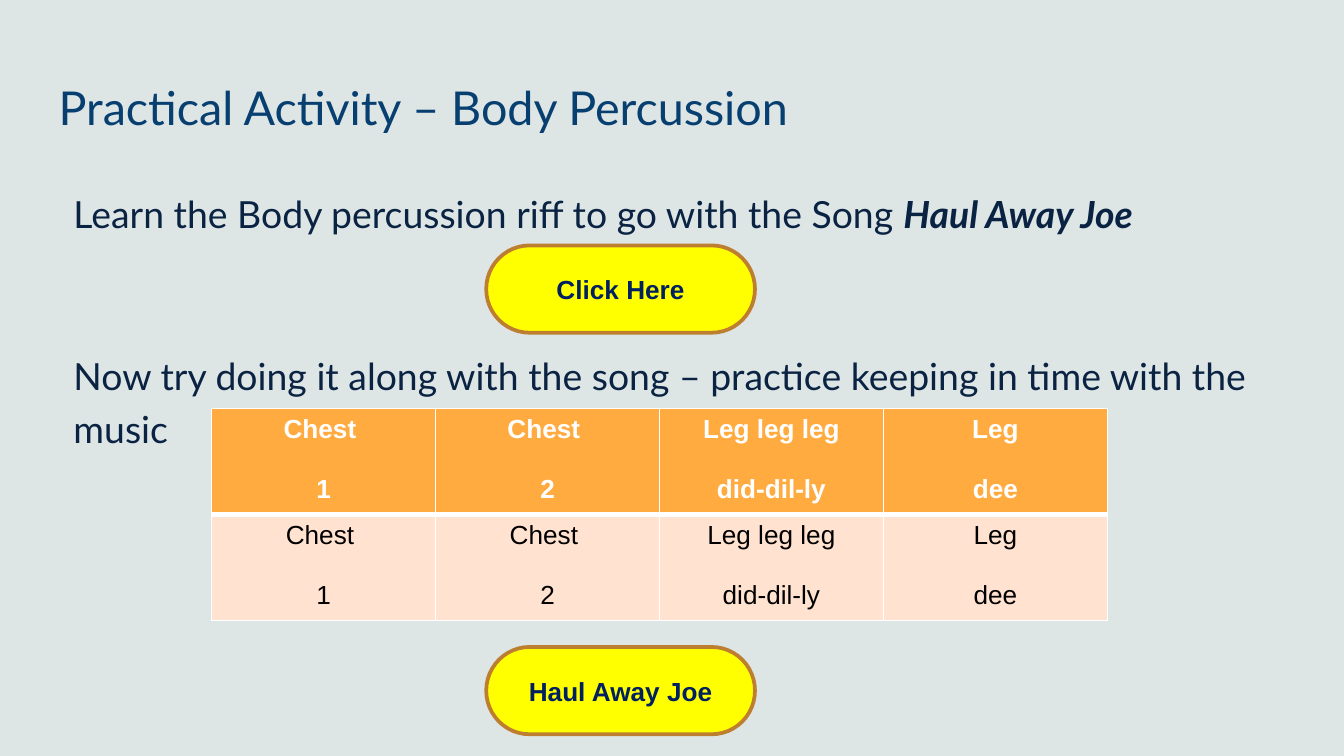
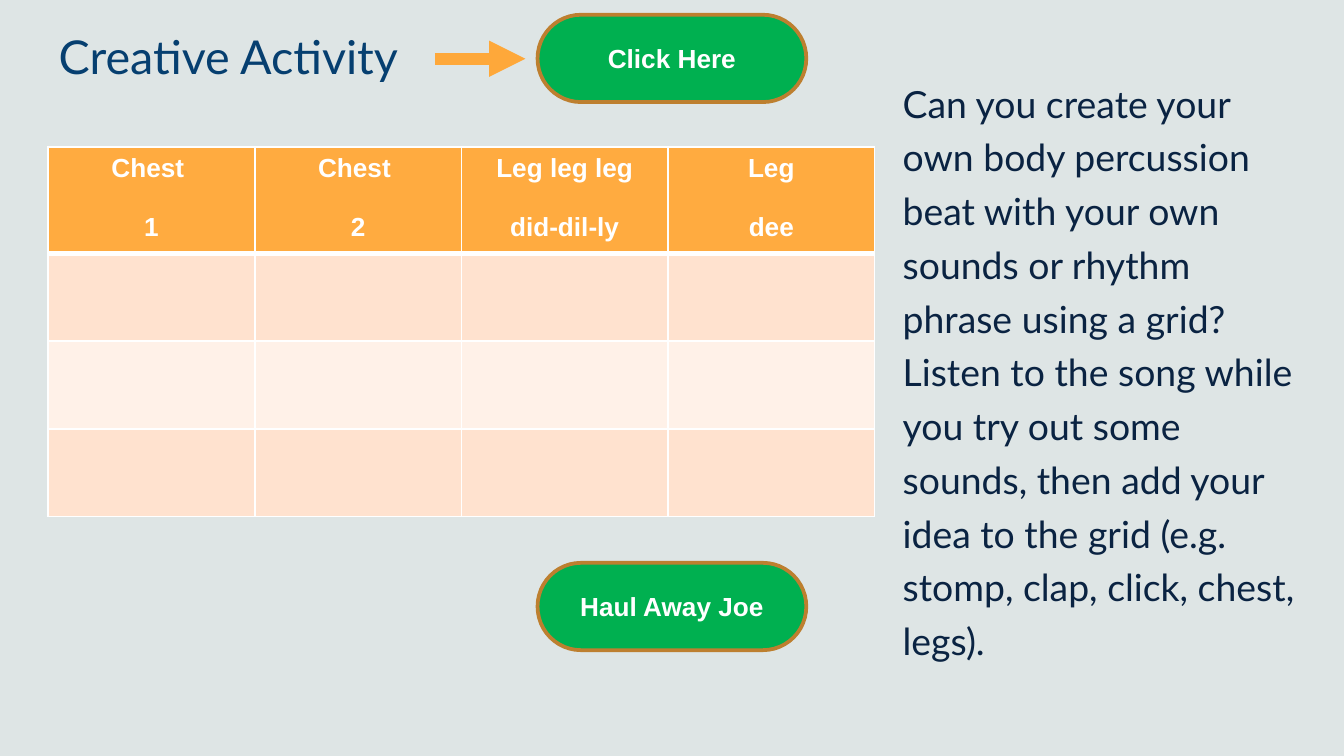
import pptx
import pptx.dml.color
import pptx.enum.shapes
import pptx.enum.text
import pptx.oxml
import pptx.oxml.ns
import pptx.util

Cm = pptx.util.Cm
Pt = pptx.util.Pt
RGBColor = pptx.dml.color.RGBColor
ALIGN = pptx.enum.text.PP_ALIGN
ANCHOR = pptx.enum.text.MSO_ANCHOR
SHAPE = pptx.enum.shapes.MSO_SHAPE
NS = pptx.oxml.ns.nsdecls("a")

MIST = RGBColor(0xDE, 0xE5, 0xE5)
BLUE = RGBColor(0x06, 0x3F, 0x70)
INK = RGBColor(0x0A, 0x23, 0x42)
NAVY = RGBColor(0x00, 0x20, 0x60)
YELLOW = RGBColor(0xFF, 0xFF, 0x00)
GREEN = RGBColor(0x00, 0xB0, 0x50)
BRONZE = RGBColor(0xBD, 0x7F, 0x2F)
ORANGE = RGBColor(0xFF, 0xAB, 0x40)
AMBER = RGBColor(0xFE, 0xA8, 0x3A)
PEACH = RGBColor(0xFF, 0xE2, 0xCF)
CREAM = RGBColor(0xFF, 0xF1, 0xE8)
WHITE = RGBColor(0xFF, 0xFF, 0xFF)
BLACK = RGBColor(0x00, 0x00, 0x00)

BEATS = [["Chest ", "1"], ["Chest ", "2"], ["Leg leg leg", "did-dil-ly"], ["Leg", "dee"]]
SONG = "Haul Away Joe"


def write(frame, paras, font="Arial", size=14, color=BLACK, bold=False,
          align=ALIGN.LEFT, lines=None, gap=0, indent=0):
    frame.word_wrap = True
    for i, para in enumerate(paras):
        p = frame.paragraphs[0] if i == 0 else frame.add_paragraph()
        p.alignment = align
        if lines:
            p.line_spacing = lines
        if i and gap:
            p.space_before = Pt(gap)
        if indent:
            p._p.get_or_add_pPr().set("marL", str(Cm(indent)))
        runs = [(para, False)] if isinstance(para, str) else para
        for text, stress in runs:
            run = p.add_run()
            run.text = text
            run.font.name = font
            run.font.size = Pt(size)
            run.font.color.rgb = color
            run.font.bold = bold or stress
            run.font.italic = stress


def add_box(slide, paras, left, top, width, height, **style):
    frame = slide.shapes.add_textbox(Cm(left), Cm(top), Cm(width), Cm(height)).text_frame
    frame.margin_left = frame.margin_right = Cm(0.25)
    frame.margin_top = frame.margin_bottom = Cm(0.25)
    write(frame, paras, font="Lato", **style)


def add_page(deck, title, top):
    slide = deck.slides.add_slide(deck.slide_layouts[6])
    slide.background.fill.solid()
    slide.background.fill.fore_color.rgb = MIST
    add_box(slide, [title], 0.86, top, 23.67, 1.6, size=25, color=BLUE)
    return slide


def add_body(slide, paras, left, top, width):
    add_box(slide, paras, left, top, width, 9.5, size=20, color=INK,
            lines=1.2, gap=57.6, indent=0.28)


def add_button(slide, text, left, top, fill, color):
    button = slide.shapes.add_shape(SHAPE.FLOWCHART_TERMINATOR,
                                    Cm(left), Cm(top), Cm(5.08), Cm(1.65))
    button.shadow.inherit = False
    button.fill.solid()
    button.fill.fore_color.rgb = fill
    button.line.color.rgb = BRONZE
    button.line.width = Pt(2)
    button.text_frame.vertical_anchor = ANCHOR.MIDDLE
    write(button.text_frame, [text], color=color, bold=True, align=ALIGN.CENTER)


def add_edge(cell, side, width):
    cell._tc.get_or_add_tcPr().append(pptx.oxml.parse_xml(
        f'<a:ln{side} {NS} w="{Pt(width)}"><a:solidFill>'
        f'<a:srgbClr val="{WHITE}"/></a:solidFill></a:ln{side}>'))


def add_grid(slide, rows, fills, left, top, width, heights):
    count = len(BEATS)
    table = slide.shapes.add_table(len(rows), count, Cm(left), Cm(top),
                                   Cm(width), Cm(sum(heights))).table
    for col in table.columns:
        col.width = Cm(width / count)
    for r, (beats, fill, height) in enumerate(zip(rows, fills, heights)):
        table.rows[r].height = Cm(height)
        head = r == 0
        for c in range(count):
            cell = table.cell(r, c)
            for side in "LRTB":
                thick = (side == "B" and r == 0) or (side == "T" and r == 1)
                add_edge(cell, side, 3 if thick else 1)
            cell.fill.solid()
            cell.fill.fore_color.rgb = fill
            if beats:
                write(cell.text_frame, beats[c], color=WHITE if head else BLACK,
                      bold=head, align=ALIGN.CENTER, gap=16)


def add_arrow(slide, start, end, y):
    arrow = slide.shapes.add_connector(pptx.enum.shapes.MSO_CONNECTOR.STRAIGHT,
                                       Cm(start), Cm(y), Cm(end), Cm(y))
    arrow.line.color.rgb = AMBER
    arrow.line.width = Pt(6.5)
    arrow.line._get_or_add_ln().append(
        pptx.oxml.parse_xml(f'<a:tailEnd {NS} type="triangle"/>'))
    arrow._element.spPr.append(pptx.oxml.parse_xml(f"<a:effectLst {NS}/>"))


def add_riff(deck):
    slide = add_page(deck, "Practical Activity – Body Percussion", 1.24)
    add_body(slide, [
        [("Learn the Body percussion riff to go with the Song ", False), (SONG, True)],
        "Now try doing it along with the song – practice keeping in time with the music",
    ], 0.86, 3.2, 23.67)
    add_button(slide, "Click Here", 9.19, 4.64, YELLOW, NAVY)
    add_button(slide, SONG, 9.19, 12.23, YELLOW, NAVY)
    add_grid(slide, [BEATS, BEATS], [ORANGE, PEACH], 4, 7.72, 16.93, [1.92, 1.92])


def add_task(deck):
    slide = add_page(deck, "Creative Activity", 0.28)
    add_body(slide, [
        "Can you create your own body percussion beat with your own sounds or rhythm "
        "phrase using a grid? Listen to the song while you try out some sounds, then "
        "add your idea to the grid (e.g. stomp, clap, click, chest, legs).",
    ], 16.53, 1.11, 8.28)
    add_grid(slide, [BEATS, None, None, None], [ORANGE, PEACH, CREAM, PEACH],
             0.91, 2.78, 15.62, [1.92, 1.66, 1.66, 1.66])
    add_button(slide, "Click Here", 10.16, 0.28, GREEN, WHITE)
    add_button(slide, SONG, 10.16, 10.64, GREEN, WHITE)
    add_arrow(slide, 8.22, 9.93, 1.11)


def main():
    deck = pptx.Presentation()
    deck.slide_width = Cm(25.4)
    deck.slide_height = Cm(14.29)
    add_riff(deck)
    add_task(deck)
    deck.save("out.pptx")


if __name__ == "__main__":
    main()
